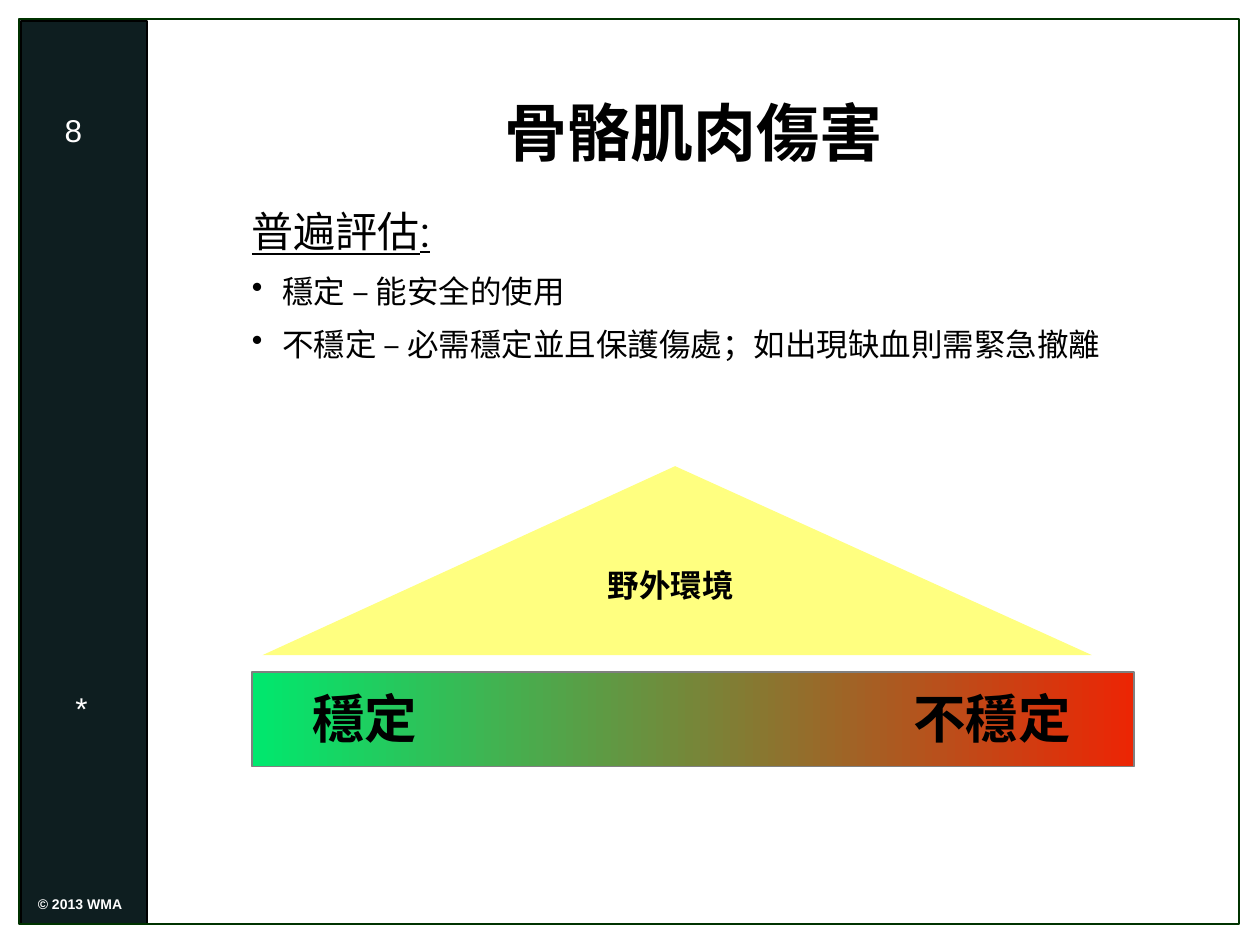
from lxml import etree
from pptx import Presentation
from pptx import util as u
from pptx.dml.color import RGBColor
from pptx.enum import shapes, text
from pptx.oxml.ns import qn

COLORS = {
    "sidebar": "0E1E20", "frame": "003300", "ink": "000000", "light": "FFFFFF",
    "peak": "FFFF80", "stable": "00E86E", "unstable": "EC2504", "edge": "808080",
}
COLUMNS, ROWS = 120, 90
CENTER = text.PP_ALIGN.CENTER


def rgb(name):
    return RGBColor.from_string(COLORS[name])


class Deck:
    """Holds the style, the grid and the current slide."""

    label = {"margin_left": u.Inches(0.02), "margin_right": u.Inches(0.02),
             "margin_top": u.Inches(0.03), "margin_bottom": u.Inches(0.03),
             "word_wrap": False}
    flowing = {"word_wrap": True, "auto_size": text.MSO_AUTO_SIZE.SHAPE_TO_FIT_TEXT}
    middle = {"word_wrap": True, "vertical_anchor": text.MSO_ANCHOR.MIDDLE}

    def __init__(self, width, height):
        self.prs = Presentation()
        self.prs.slide_width, self.prs.slide_height = u.Inches(width), u.Inches(height)
        self.slide = self.prs.slides.add_slide(self.prs.slide_layouts[6])

    def place(self, *cells):
        """Turn column, row pairs into slide lengths."""
        units = (self.prs.slide_width / COLUMNS, self.prs.slide_height / ROWS)
        return [round(cell * units[i % 2]) for i, cell in enumerate(cells)]

    def set_all(self, target, values):
        for name, value in values.items():
            setattr(target, name, value)

    def rect(self, cells, line, width, fill=None, gradient=None):
        box = self.slide.shapes.add_shape(shapes.MSO_SHAPE.RECTANGLE, *self.place(*cells))
        box.shadow.inherit = False
        if gradient:
            box.fill.gradient()
            box.fill.gradient_angle = 0
            for stop, color, position in zip(box.fill.gradient_stops, gradient, (0, 1)):
                stop.color.rgb, stop.position = rgb(color), position
        elif fill:
            box.fill.solid()
            box.fill.fore_color.rgb = rgb(fill)
        else:
            box.fill.background()
        box.line.color.rgb = rgb(line)
        box.line.width = u.Pt(width)

    def polygon(self, points, fill):
        start, *rest = [self.place(*point) for point in points]
        builder = self.slide.shapes.build_freeform(*start)
        builder.add_line_segments(rest, close=True)
        outline = builder.convert_to_shape()
        outline.shadow.inherit = False
        outline.fill.solid()
        outline.fill.fore_color.rgb = rgb(fill)
        outline.line.fill.background()

    def textbox(self, cells, words, size, frame, font="Arial", **paragraph):
        box = self.slide.shapes.add_textbox(*self.place(*cells))
        self.set_all(box.text_frame, frame)
        self.paragraph(box.text_frame.paragraphs[0], words, size, font, **paragraph)
        return box.text_frame

    def paragraph(self, target, words, size, font, color="ink", bold=False,
                  underline=False, bullet=False, tab=None, **layout):
        target.text = words
        props = target._p.get_or_add_pPr()
        if bullet:
            indent = u.Inches(0.24)
            props.set("marL", str(indent))
            props.set("indent", str(-indent))
            etree.SubElement(props, qn("a:buChar"), char="•")
        if tab:
            stops = etree.SubElement(props, qn("a:tabLst"))
            etree.SubElement(stops, qn("a:tab"), pos=str(u.Inches(tab)), algn="l")
        self.set_all(target, layout)
        for part in (target, *target.runs):
            self.set_all(part.font, {"name": font, "size": u.Pt(size),
                                     "bold": bold, "underline": underline})
            part.font.color.rgb = rgb(color)


def main():
    deck = Deck(10, 7.5)

    # Sidebar, page frame and copyright line
    deck.rect((2, 2, 12, 86), "ink", 1, fill="sidebar")
    deck.rect((1.8, 1.8, 116.2, 86.2), "frame", 1.5)
    deck.textbox((3.36, 85, 10, 3), "© 2013 WMA", 8, deck.label, color="light",
                 bold=True, line_spacing=u.Pt(9.1))

    # Peak above the scale
    deck.polygon([(25, 62.4), (104, 62.4), (64.3, 44.4)], "peak")

    # Title and assessment
    deck.textbox((20, 5, 92, 15), "骨骼肌肉傷害", 36, deck.middle, bold=True, alignment=CENTER)
    assessment = deck.textbox((22.8, 19, 91, 28.7), "普遍評估:", 24, deck.flowing,
                              "Roboto", underline=True)
    for finding in ("穩定 – 能安全的使用",
                    "不穩定 – 必需穩定並且保護傷處；如出現缺血則需緊急撤離"):
        deck.paragraph(assessment.add_paragraph(), finding, 18, "Roboto",
                       bullet=True, space_before=u.Pt(9))

    # Scale from stable to unstable
    deck.rect((24, 64, 84, 9), "edge", 1, gradient=("stable", "unstable"))
    deck.textbox((47, 53.6, 33.8, 7.3), "野外環境", 18, deck.label, "Roboto",
                 bold=True, alignment=CENTER, line_spacing=u.Pt(21))
    deck.textbox((29.5, 65, 78, 7.7), "穩定\t不穩定", 30, {**deck.label, "word_wrap": True},
                 "Roboto", bold=True, tab=4.77, line_spacing=u.Pt(36))

    # Slide number and date mark
    deck.textbox((2, 10, 10, 4.8), "8", 18, deck.flowing, color="light", alignment=CENTER)
    deck.textbox((6, 65, 3, 4.8), "*", 18, deck.flowing, color="light")

    deck.prs.save("out.pptx")


if __name__ == "__main__":
    main()
